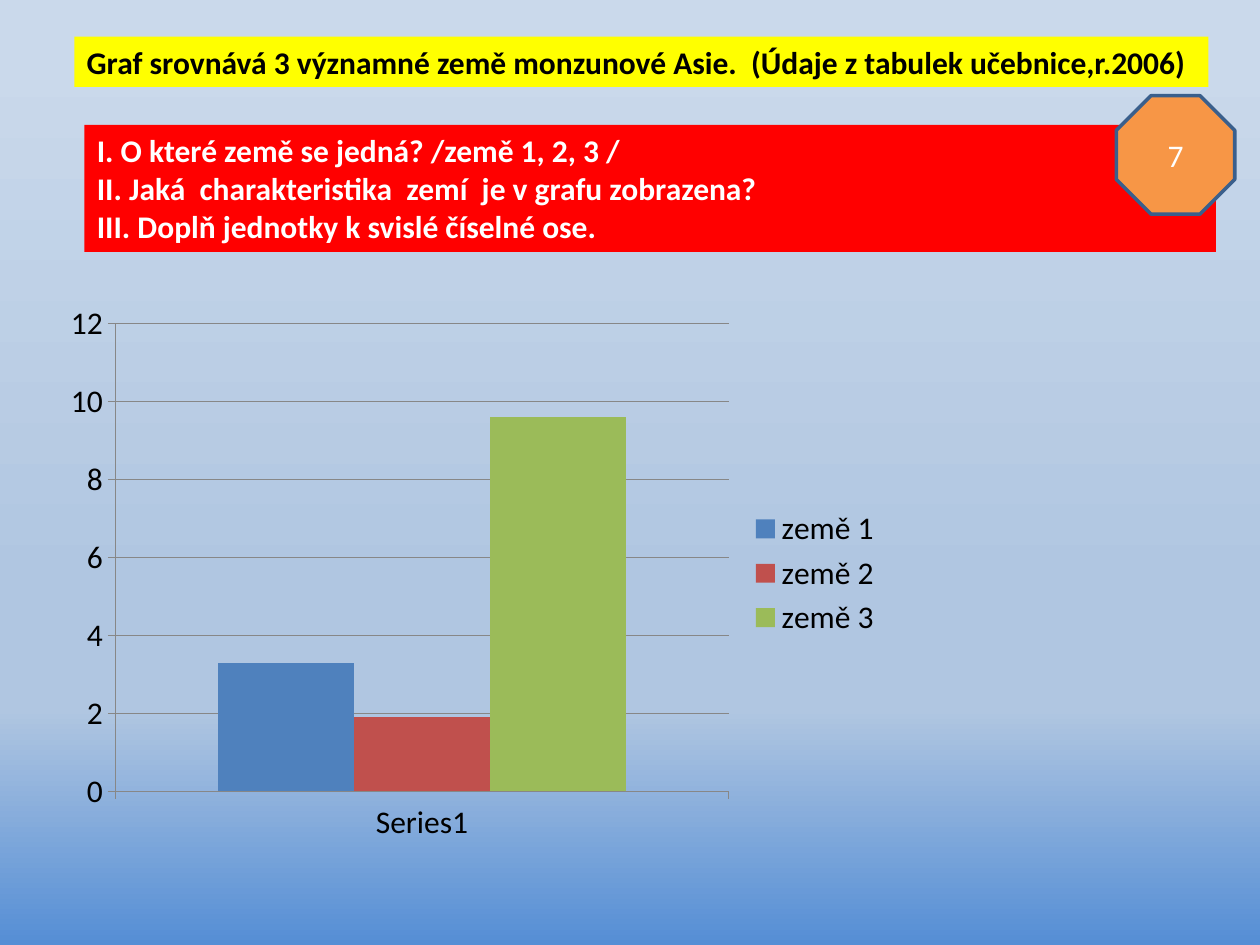
from lxml.etree import SubElement
from pptx import Presentation
from pptx.chart.data import CategoryChartData
from pptx.dml.color import RGBColor
from pptx.enum.chart import XL_CHART_TYPE, XL_LEGEND_POSITION, XL_TICK_MARK
from pptx.enum.shapes import MSO_SHAPE
from pptx.enum.text import MSO_ANCHOR, PP_ALIGN
from pptx.oxml.ns import qn
from pptx.util import Inches, Pt

COLORS = {
    "black": "000000",
    "white": "FFFFFF",
    "yellow": "FFFF00",
    "red": "FF0000",
    "orange": "F79646",
    "outline": "3A5F8C",
    "axis": "878787",
}
BACKGROUND_STOPS = [(6, "CAD9EB"), (62, "B0C6E1"), (75, "B0C6E1"), (100, "558ED5")]
COUNTRIES = [("země 1", 3.3, "4F81BD"), ("země 2", 1.9, "C0504D"), ("země 3", 9.6, "9BBB59")]
TITLE = "Graf srovnává 3 významné země monzunové Asie.  (Údaje z tabulek učebnice,r.2006)"
QUESTIONS = [
    "I. O které země se jedná? /země 1, 2, 3 /",
    "II. Jaká  charakteristika  zemí  je v grafu zobrazena?",
    "III. Doplň jednotky k svislé číselné ose.",
]
FONT = "Calibri"
TEXT_SIZE = Pt(18)


def color(name):
    return RGBColor.from_string(COLORS[name])


def inches(box):
    return [Inches(length) for length in box]


def style_font(font, color_name, bold=False):
    font.name = FONT
    font.size = TEXT_SIZE
    font.bold = bold
    font.color.rgb = color(color_name)


def paint_background(page):
    fill = page.background.fill
    fill.gradient()
    fill.gradient_angle = 270
    stop_list = page.element.find(".//" + qn("a:gsLst"))
    for stop in list(stop_list):
        stop_list.remove(stop)
    for percent, hex_color in BACKGROUND_STOPS:
        stop = SubElement(stop_list, qn("a:gs"), pos=str(percent * 1000))
        SubElement(stop, qn("a:srgbClr"), val=hex_color)


def write_lines(frame, lines, color_name, bold, align):
    for index, line in enumerate(lines):
        para = frame.paragraphs[0] if index == 0 else frame.add_paragraph()
        para.alignment = align
        span = para.add_run()
        span.text = line
        style_font(span.font, color_name, bold)


def add_banner(page, box, lines, fill_name, text_name, wrap=True):
    banner = page.shapes.add_textbox(*inches(box))
    banner.fill.solid()
    banner.fill.fore_color.rgb = color(fill_name)
    banner.text_frame.word_wrap = wrap
    write_lines(banner.text_frame, lines, text_name, True, PP_ALIGN.LEFT)


def add_badge(page, box, label):
    badge = page.shapes.add_shape(MSO_SHAPE.OCTAGON, *inches(box))
    badge.shadow.inherit = False
    badge.fill.solid()
    badge.fill.fore_color.rgb = color("orange")
    badge.line.color.rgb = color("outline")
    badge.line.width = Pt(2)
    badge.text_frame.vertical_anchor = MSO_ANCHOR.MIDDLE
    write_lines(badge.text_frame, [label], "white", False, PP_ALIGN.CENTER)


def add_country_chart(page, box):
    data = CategoryChartData()
    data.categories = ["Series1"]
    for name, value, _ in COUNTRIES:
        data.add_series(name, [value])
    chart = page.shapes.add_chart(XL_CHART_TYPE.COLUMN_CLUSTERED, *inches(box), data).chart
    style_font(chart.font, "black")
    chart.has_title = False
    chart.has_legend = True
    chart.legend.position = XL_LEGEND_POSITION.RIGHT
    chart.legend.include_in_layout = False

    plot = chart.plots[0]
    plot.gap_width = 150
    plot.vary_by_categories = False
    for series, (_, _, hex_color) in zip(plot.series, COUNTRIES):
        series.format.fill.solid()
        series.format.fill.fore_color.rgb = RGBColor.from_string(hex_color)

    chart.value_axis.has_major_gridlines = True
    chart.value_axis.minimum_scale = 0
    chart.value_axis.maximum_scale = 12
    chart.value_axis.major_unit = 2
    for axis in (chart.category_axis, chart.value_axis):
        axis.major_tick_mark = XL_TICK_MARK.OUTSIDE
    for part in (chart.category_axis, chart.value_axis, chart.value_axis.major_gridlines):
        part.format.line.color.rgb = color("axis")
        part.format.line.width = Pt(0.75)


def main():
    deck = Presentation()
    deck.slide_width = Inches(10)
    deck.slide_height = Inches(7.5)
    page = deck.slides.add_slide(deck.slide_layouts[6])
    paint_background(page)
    add_country_chart(page, (0.43, 2.33, 6.67, 4.44))
    add_banner(page, (0.59, 0.29, 9, 0.4), [TITLE], "yellow", "black", wrap=False)
    add_banner(page, (0.67, 0.99, 8.98, 1.01), QUESTIONS, "red", "white")
    add_badge(page, (8.86, 0.76, 0.94, 0.94), "7")
    deck.save("out.pptx")


if __name__ == "__main__":
    main()
